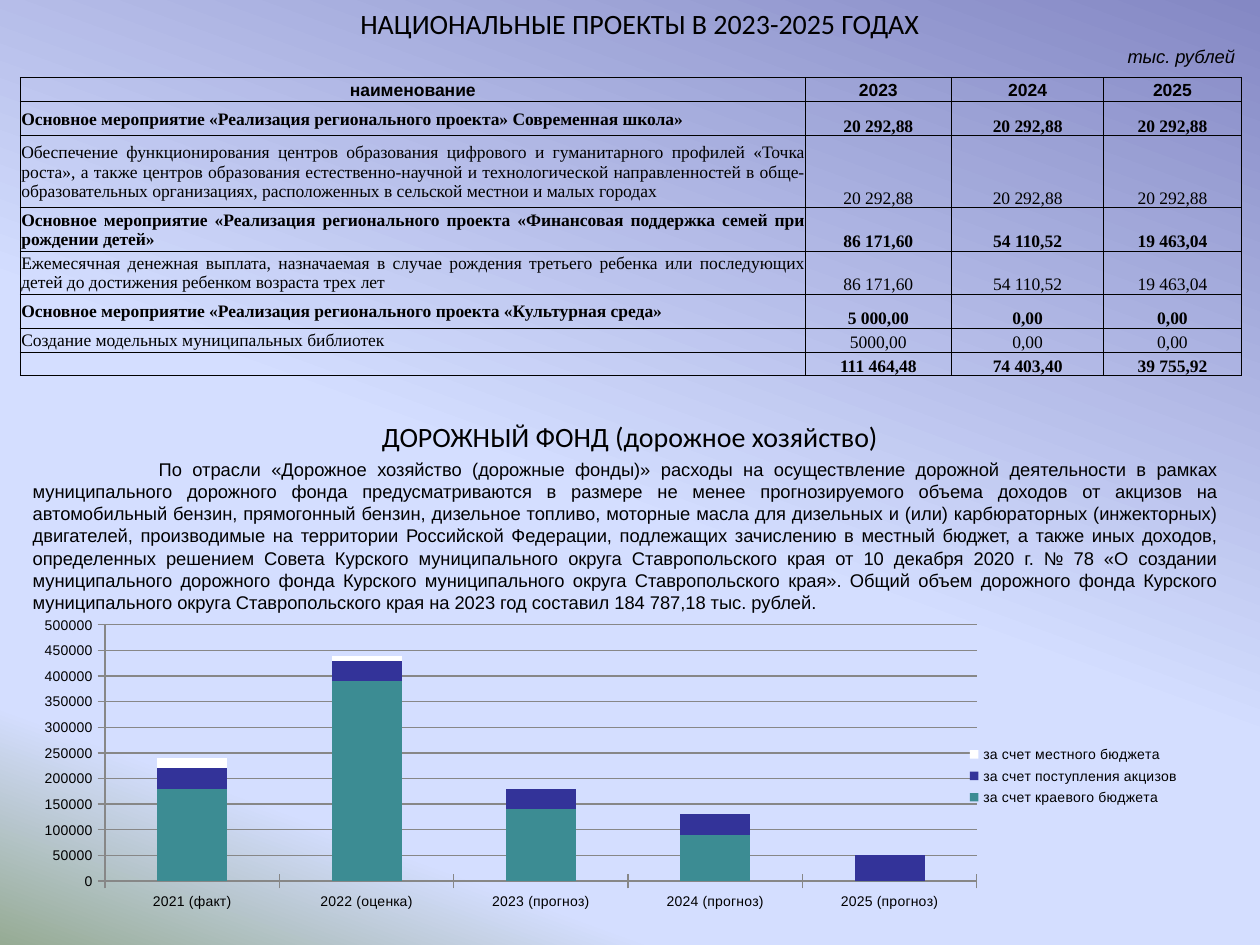
"""Build the slide on national projects and the road fund."""
import lxml.etree
import pptx
import pptx.chart.data
import pptx.dml.color
import pptx.enum.chart
import pptx.enum.text
import pptx.oxml
import pptx.oxml.ns
import pptx.util

Cm, Pt = pptx.util.Cm, pptx.util.Pt
RGB = pptx.dml.color.RGBColor.from_string
ALIGN, ANCHOR = pptx.enum.text.PP_ALIGN, pptx.enum.text.MSO_ANCHOR
qn = pptx.oxml.ns.qn
NS = pptx.oxml.ns.nsdecls("a", "c")
COLORS = {"text": "000000", "border": "000000", "grid": "878787", "regional": "3C8C93",
          "excise": "333399", "local": "FFFFFF", "bg_top": "8488C4",
          "bg_mid": "D4DEFF", "bg_end": "96AB94"}


def set_text(tf, text, font, size, align, bold=False, italic=False):
    p = tf.paragraphs[0]
    p.text = text
    p.alignment = align
    p.font.name, p.font.size = font, Pt(size)
    p.font.bold, p.font.italic = bold, italic
    p.font.color.rgb = RGB(COLORS["text"])
    return p


def add_text(left, top, width, height, *style, **kwargs):
    sp = s.shapes.add_textbox(Cm(left), Cm(top), Cm(width), Cm(height))
    sp.text_frame.word_wrap = True
    return set_text(sp.text_frame, *style, **kwargs)


prs = pptx.Presentation()
prs.slide_width, prs.slide_height = Cm(25.4), Cm(19.05)
s = prs.slides.add_slide(prs.slide_layouts[6])

fill = s.background.fill
fill.gradient()
grad = s.background._cSld.find(".//" + qn("a:gradFill"))
stops = grad.find(qn("a:gsLst"))
for gs in list(stops):
    stops.remove(gs)
for pos, name in [(0, "bg_top"), (53, "bg_mid"), (83, "bg_mid"), (100, "bg_end")]:
    gs = lxml.etree.SubElement(stops, qn("a:gs"), pos=str(pos * 1000))
    lxml.etree.SubElement(gs, qn("a:srgbClr"), val=COLORS[name])
lin = grad.find(qn("a:lin"))
lin.set("ang", str(110 * 60000))
lin.set("scaled", "0")

add_text(0, 8.33, 25.4, 0.94, "ДОРОЖНЫЙ ФОНД (дорожное хозяйство)", "Calibri", 16, ALIGN.CENTER)

data = pptx.chart.data.CategoryChartData()
data.categories = ["2021 (факт)", "2022 (оценка)", "2023 (прогноз)", "2024 (прогноз)",
                   "2025 (прогноз)"]
data.add_series("за счет краевого бюджета", [180000, 390000, 140000, 90000, 0])
data.add_series("за счет поступления акцизов", [40000, 40000, 40000, 40000, 50000])
data.add_series("за счет местного бюджета", [20000, 10000, None, None, None])
chart = s.shapes.add_chart(pptx.enum.chart.XL_CHART_TYPE.COLUMN_STACKED, Cm(0.41), Cm(12.29),
                           Cm(24.41), Cm(6.15), data).chart
chart.has_title = False
chart.font.name, chart.font.size = "Arial", Pt(8)
chart.font.color.rgb = RGB(COLORS["text"])
plot = chart.plots[0]
plot.gap_width, plot.overlap, plot.vary_by_categories = 150, 100, False
for series, name in zip(plot.series, ["regional", "excise", "local"]):
    series.format.fill.solid()
    series.format.fill.fore_color.rgb = RGB(COLORS[name])
value_axis = chart.value_axis
value_axis.minimum_scale, value_axis.maximum_scale, value_axis.major_unit = 0, 500000, 50000
value_axis.has_major_gridlines = True
for axis in (chart.category_axis, value_axis):
    axis.major_tick_mark = pptx.enum.chart.XL_TICK_MARK.CROSS
    axis.tick_labels.number_format = "General"
    axis.tick_labels.number_format_is_linked = False
for line in (chart.category_axis.format.line, value_axis.format.line,
             value_axis.major_gridlines.format.line):
    line.color.rgb = RGB(COLORS["grid"])
    line.width = Pt(0.75)
chart.has_legend = True
legend = chart.legend
legend.position = pptx.enum.chart.XL_LEGEND_POSITION.RIGHT
legend.include_in_layout = False

plot_area = chart._chartSpace.chart.plotArea
for layout in plot_area.findall(qn("c:layout")):
    plot_area.remove(layout)
for parent, index, target, box in [
        (plot_area, 0, '<c:layoutTarget val="inner"/>', (0.07, 0.05, 0.72, 0.84)),
        (legend._element, 1, "", (0.78, 0.43, 0.18, 0.23))]:
    for layout in parent.findall(qn("c:layout")):
        parent.remove(layout)
    sizes = "".join(f'<c:{tag} val="{value}"/>' for tag, value in zip("xywh", box))
    parent.insert(index, pptx.oxml.parse_xml(
        f'<c:layout {NS}><c:manualLayout>{target}<c:xMode val="edge"/><c:yMode val="edge"/>'
        f"{sizes}</c:manualLayout></c:layout>"))

p = add_text(
    0.41, 9.12, 24.41, 3.25,
    "По отрасли «Дорожное хозяйство (дорожные фонды)» расходы на осуществление дорожной "
    "деятельности в рамках муниципального дорожного фонда предусматриваются в размере не менее "
    "прогнозируемого объема доходов от акцизов на автомобильный бензин, прямогонный бензин, "
    "дизельное топливо, моторные масла для дизельных и (или) карбюраторных (инжекторных) "
    "двигателей, производимые на территории Российской Федерации, подлежащих зачислению в "
    "местный бюджет, а также иных доходов, определенных решением Совета Курского муниципального "
    "округа Ставропольского края от 10 декабря 2020 г. № 78 «О создании муниципального дорожного "
    "фонда Курского муниципального округа Ставропольского края». Общий объем дорожного фонда "
    "Курского муниципального округа Ставропольского края на 2023 год составил 184 787,18 тыс. "
    "рублей.", "Arial", 10.5, ALIGN.JUSTIFY)
p._p.get_or_add_pPr().set("marL", "0")
p._p.get_or_add_pPr().set("indent", str(Cm(2.54)))

rows = [
    ("наименование", "2023", "2024", "2025"),
    ("Основное мероприятие «Реализация регионального проекта» Современная школа»",
     "20 292,88", "20 292,88", "20 292,88"),
    ("Обеспечение функционирования центров образования цифрового и гуманитарного профилей "
     "«Точка роста», а также центров образования естественно-научной и технологической "
     "направленностей в обще-образовательных организациях, расположенных в сельской местнои "
     "и малых городах", "20 292,88", "20 292,88", "20 292,88"),
    ("Основное мероприятие «Реализация регионального проекта «Финансовая поддержка семей при "
     "рождении детей»", "86 171,60", "54 110,52", "19 463,04"),
    ("Ежемесячная денежная выплата, назначаемая в случае рождения третьего ребенка или "
     "последующих детей до достижения ребенком возраста трех лет",
     "86 171,60", "54 110,52", "19 463,04"),
    ("Основное мероприятие «Реализация регионального проекта «Культурная среда»",
     "5 000,00", "0,00", "0,00"),
    ("Создание модельных муниципальных библиотек", "5000,00", "0,00", "0,00"),
    ("", "111 464,48", "74 403,40", "39 755,92"),
]
heights = [0.48, 0.69, 1.45, 0.69, 0.74, 0.69, 0.48, 0.48]
widths = [15.82, 2.95, 3.07, 2.77]
table = s.shapes.add_table(len(rows), len(widths), Cm(0.41), Cm(1.57), Cm(sum(widths)),
                           Cm(sum(heights))).table
table.first_row = table.horz_banding = False
for column, width in zip(table.columns, widths):
    column.width = Cm(width)
for i, (row, height) in enumerate(zip(rows, heights)):
    table.rows[i].height = Cm(height)
    for j, text in enumerate(row):
        cell = table.cell(i, j)
        cell.margin_left = cell.margin_right = cell.margin_top = Cm(0.02)
        cell.margin_bottom = 0
        cell.vertical_anchor = ANCHOR.MIDDLE if i == 0 or j == 0 else ANCHOR.BOTTOM
        set_text(cell.text_frame, text, "Times New Roman" if i else "Arial", 10,
                 ALIGN.JUSTIFY if i and j == 0 else ALIGN.CENTER, bold=i in (0, 1, 3, 5, 7))
        tc_pr = cell._tc.get_or_add_tcPr()
        for side in ("lnL", "lnR", "lnT", "lnB"):
            tc_pr.append(pptx.oxml.parse_xml(
                f'<a:{side} {NS} w="{Pt(0.5)}"><a:solidFill><a:srgbClr val="{COLORS["border"]}"/>'
                f"</a:solidFill></a:{side}>"))
        cell.fill.background()

add_text(0.2, 0, 25.4, 0.94, "НАЦИОНАЛЬНЫЕ ПРОЕКТЫ В 2023-2025 ГОДАХ", "Calibri", 16, ALIGN.CENTER)
add_text(22.23, 0.79, 3.17, 0.69, "тыс. рублей", "Arial", 10.5, ALIGN.CENTER, italic=True)

prs.save("out.pptx")
